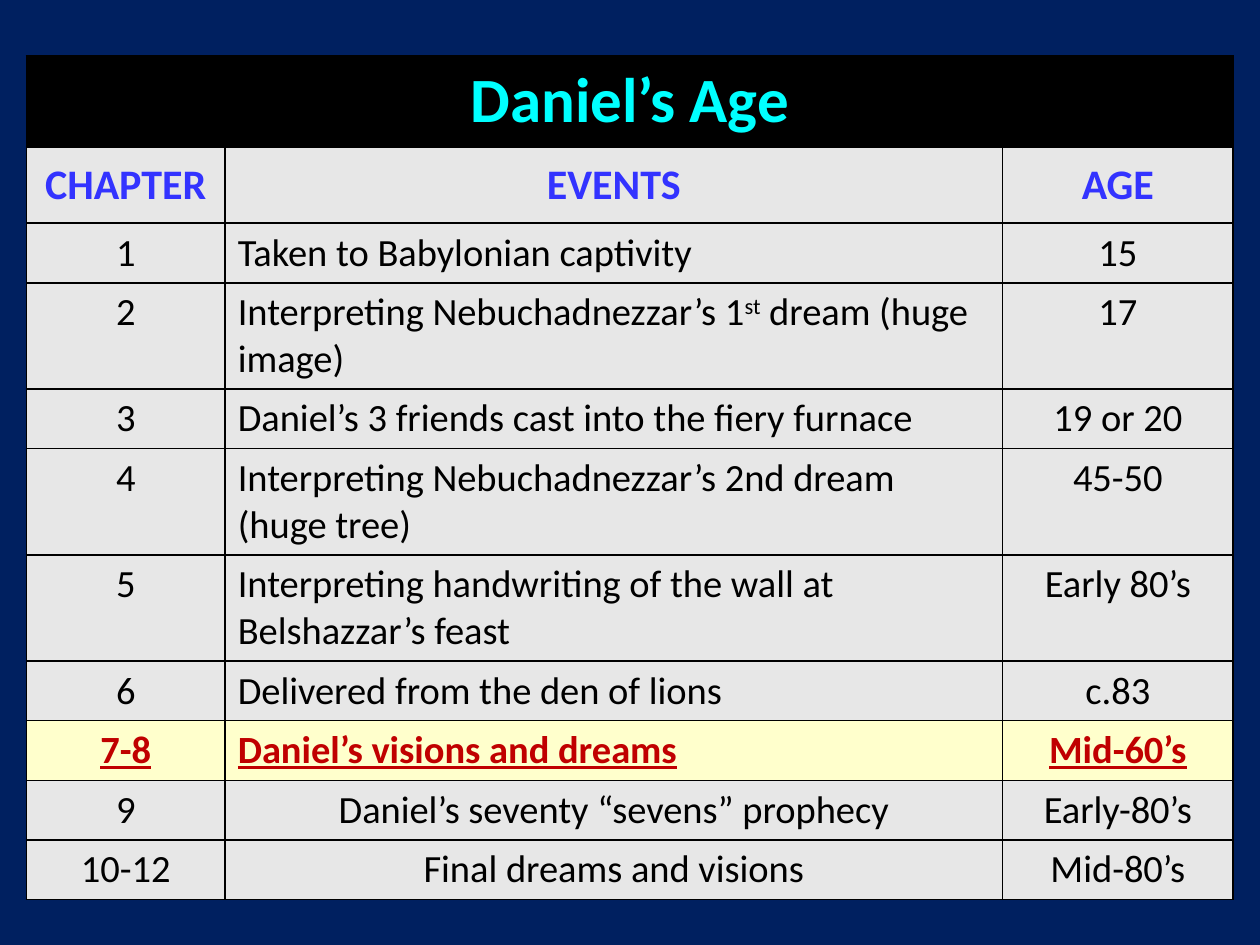
import pptx
import pptx.util
import pptx.dml.color
import pptx.enum.text
import pptx.oxml
import pptx.oxml.ns
from pptx.util import Cm

COLORS = {
    "navy": "002060",
    "black": "000000",
    "gray": "E7E7E7",
    "yellow": "FFFFCC",
    "cyan": "00FFFF",
    "blue": "3333FF",
    "red": "C00000",
}
COLUMN_WIDTHS = [4.01, 15.67, 4.65]
TITLE_HEIGHT, HEADER_HEIGHT, LINE_HEIGHT, WRAPPED_HEIGHT = 1.83, 1.54, 1.2, 2.14
HEADERS = ["CHAPTER", "EVENTS", "AGE"]
EVENTS = [
    ("1", ["Taken to Babylonian captivity"], "15"),
    ("2", ["Interpreting Nebuchadnezzar’s 1", "st", " dream (huge image)"], "17"),
    ("3", ["Daniel’s 3 friends cast into the fiery furnace"], "19 or 20"),
    ("4", ["Interpreting Nebuchadnezzar’s 2nd dream (huge tree)"], "45-50"),
    ("5", ["Interpreting handwriting of the wall at Belshazzar’s feast"], "Early 80’s"),
    ("6", ["Delivered from the den of lions"], "c.83"),
    ("7-8", ["Daniel’s visions and dreams"], "Mid-60’s"),
    ("9", ["Daniel’s seventy “sevens” prophecy"], "Early-80’s"),
    ("10-12", ["Final dreams and visions"], "Mid-80’s"),
]
WRAPPED = {"2", "4", "5"}
CENTERED = {"9", "10-12"}
HIGHLIGHTED = "7-8"


def rgb(name):
    return pptx.dml.color.RGBColor.from_string(COLORS[name])


class Deck:
    font = "Calibri"

    def __init__(self, prs):
        self.s = prs.slides.add_slide(prs.slide_layouts[6])

    def background(self, color):
        fill = self.s.background.fill
        fill.solid()
        fill.fore_color.rgb = rgb(color)

    def table(self, left, top, widths, heights):
        frame = self.s.shapes.add_table(
            len(heights), len(widths), Cm(left), Cm(top), Cm(sum(widths)), Cm(sum(heights))
        )
        table = frame.table
        table.first_row = table.horz_banding = False
        for column, width in zip(table.columns, widths):
            column.width = Cm(width)
        for row, height in zip(table.rows, heights):
            row.height = Cm(height)
        return table

    def cell(self, cell, runs, size, color, fill, bold=False, underline=False,
             centered=True, middle=False):
        cell.fill.solid()
        cell.fill.fore_color.rgb = rgb(fill)
        self.borders(cell)
        if middle:
            cell.vertical_anchor = pptx.enum.text.MSO_ANCHOR.MIDDLE
        p = cell.text_frame.paragraphs[0]
        align = pptx.enum.text.PP_ALIGN
        p.alignment = align.CENTER if centered else align.LEFT
        for text in runs:
            r = p.add_run()
            r.text = text
            r.font.name = self.font
            r.font.size = pptx.util.Pt(size)
            r.font.bold = bold
            r.font.underline = underline
            r.font.color.rgb = rgb(color)
            if text == "st":
                r._r.get_or_add_rPr().set("baseline", "30000")

    def borders(self, cell):
        tc_pr = cell._tc.get_or_add_tcPr()
        for i, side in enumerate(("lnL", "lnR", "lnT", "lnB")):
            tc_pr.insert(i, pptx.oxml.parse_xml(
                f'<a:{side} {pptx.oxml.ns.nsdecls("a")} w="12700"><a:solidFill>'
                f'<a:srgbClr val="{COLORS["black"]}"/></a:solidFill></a:{side}>'
            ))


def main():
    prs = pptx.Presentation()
    prs.slide_width, prs.slide_height = Cm(25.4), Cm(19.05)
    deck = Deck(prs)
    deck.background("navy")

    heights = [TITLE_HEIGHT, HEADER_HEIGHT]
    heights += [WRAPPED_HEIGHT if row[0] in WRAPPED else LINE_HEIGHT for row in EVENTS]
    table = deck.table(0.53, 1.13, COLUMN_WIDTHS, heights)

    table.cell(0, 0).merge(table.cell(0, 2))
    for col, runs in enumerate((["Daniel’s Age"], [], [])):
        deck.cell(table.cell(0, col), runs, 36, "cyan", "black", bold=True)
    for col, header in enumerate(HEADERS):
        deck.cell(table.cell(1, col), [header], 24, "blue", "gray", bold=True, middle=True)
    for row, (chapter, event, age) in enumerate(EVENTS, start=2):
        marked = chapter == HIGHLIGHTED
        color, fill = ("red", "yellow") if marked else ("black", "gray")
        for col, runs in enumerate(([chapter], event, [age])):
            deck.cell(table.cell(row, col), runs, 22, color, fill, bold=marked,
                      underline=marked, centered=col != 1 or chapter in CENTERED)

    prs.save("out.pptx")


if __name__ == "__main__":
    main()
